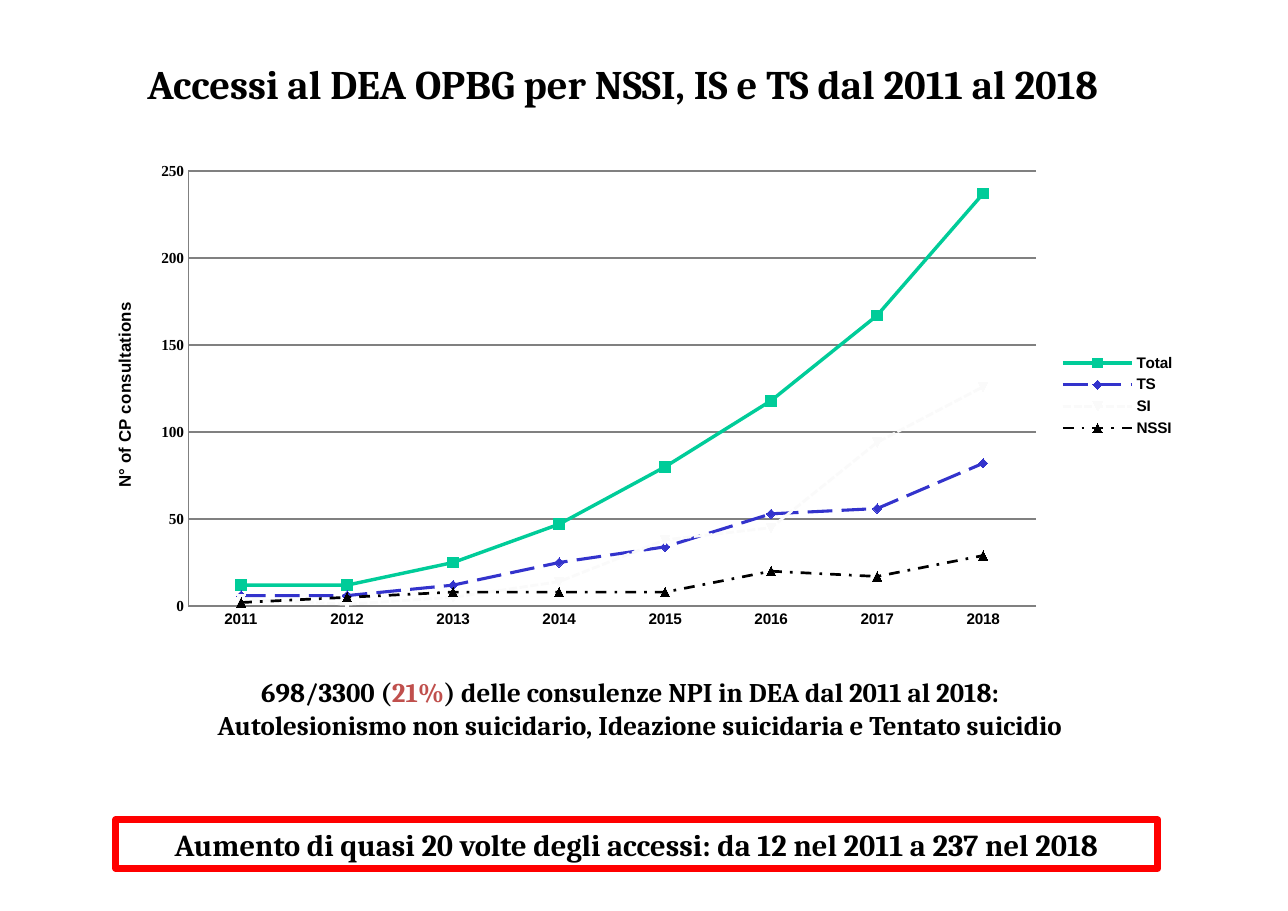
from pptx import Presentation
from pptx.chart.data import CategoryChartData
from pptx.dml.color import RGBColor
from pptx.enum.chart import XL_CHART_TYPE as CT, XL_LEGEND_POSITION as LP
from pptx.enum.chart import XL_TICK_MARK as TM
from pptx.enum.dml import MSO_LINE_DASH_STYLE as DASH
from pptx.enum.shapes import MSO_SHAPE
from pptx.enum.text import PP_ALIGN
from pptx.oxml import parse_xml
from pptx.util import Cm, Pt


def rgb(hex_color):
    return RGBColor.from_string(hex_color)


def write_line(p, size, *parts):
    """Fill a centred bold paragraph with (text, colour) parts."""
    p.alignment = PP_ALIGN.CENTER
    p.font.name, p.font.size, p.font.bold = "Cambria", Pt(size), True
    for text, color in parts:
        r = p.add_run()
        r.text = text
        r.font.color.rgb = rgb(color)


BLACK, GRAY, RED = "000000", "808080", "C0504D"

prs = Presentation()
prs.slide_width, prs.slide_height = Cm(29.7), Cm(21)
s = prs.slides.add_slide(prs.slide_layouts[6])

# Chart: name, values, colour, dash, line width, marker size
series_rows = [
    ("Total", (12, 12, 25, 47, 80, 118, 167, 237), "00CC99", DASH.SOLID, 2.25, 7),
    ("TS", (6, 6, 12, 25, 34, 53, 56, 82), "3333CC", DASH.LONG_DASH, 2, 6),
    ("SI", (4, 1, 5, 14, 38, 45, 94, 126), "FAFAFA", DASH.SQUARE_DOT, 1.75, 6),
    ("NSSI", (2, 5, 8, 8, 8, 20, 17, 29), BLACK, DASH.DASH_DOT, 1.75, 6),
]
data = CategoryChartData()
data.categories = [str(year) for year in range(2011, 2019)]
for name, values, *_ in series_rows:
    data.add_series(name, values)
chart = s.shapes.add_chart(CT.LINE_MARKERS, Cm(2.06), Cm(3.53), Cm(25.3), Cm(11.18), data).chart
chart.has_title = False
chart.font.name, chart.font.size, chart.font.bold = "Times New Roman", Pt(10), True
chart.font.color.rgb = rgb(BLACK)

for series, (_, _, color, dash, width, marker_size) in zip(chart.plots[0].series, series_rows):
    series.smooth = False
    line = series.format.line
    line.color.rgb, line.width, line.dash_style = rgb(color), Pt(width), dash
    series.marker.size = marker_size
    series.marker.format.fill.solid()
    series.marker.format.fill.fore_color.rgb = rgb(color)
    series.marker.format.line.color.rgb = rgb(color)

years, counts = chart.category_axis, chart.value_axis
for axis in (years, counts):
    axis.major_tick_mark = axis.minor_tick_mark = TM.NONE
    axis.format.line.color.rgb = rgb(GRAY)
counts.minimum_scale, counts.maximum_scale, counts.major_unit = 0, 250, 50
counts.major_gridlines.format.line.color.rgb = rgb(GRAY)
counts.axis_title.text_frame.text = "N° of CP consultations"
title_font = counts.axis_title.text_frame.paragraphs[0].font
title_font.size = Pt(11)

chart.has_legend = True
chart.legend.position, chart.legend.include_in_layout = LP.RIGHT, False
for font in (years.tick_labels.font, title_font, chart.legend.font):
    font.name, font.bold = "Arial", True
    font.color.rgb = rgb(BLACK)
years.tick_labels.font.size = chart.legend.font.size = Pt(10)

plot_area = chart.plots[0]._element.getparent()
for old in plot_area.findall("{*}layout"):
    plot_area.remove(old)
plot_area.insert(0, parse_xml(
    '<c:layout xmlns:c="http://schemas.openxmlformats.org/drawingml/2006/chart">'
    '<c:manualLayout><c:layoutTarget val="inner"/><c:xMode val="edge"/><c:yMode val="edge"/>'
    '<c:x val="0.09"/><c:y val="0.037"/><c:w val="0.773"/><c:h val="0.897"/>'
    '</c:manualLayout></c:layout>'))

# Texts
title = s.shapes.add_textbox(Cm(2.06), Cm(1.24), Cm(24.61), Cm(1.4))
summary = s.shapes.add_textbox(Cm(2.97), Cm(15.44), Cm(23.14), Cm(1.8))
increase = s.shapes.add_shape(MSO_SHAPE.RECTANGLE, Cm(2.67), Cm(18.9), Cm(24.03), Cm(1.12))
increase.shadow.inherit = False
increase.fill.background()
increase.line.color.rgb, increase.line.width = rgb("FF0000"), Pt(4.5)
for sp in (title, summary, increase):
    sp.text_frame.word_wrap = True

write_line(title.text_frame.paragraphs[0], 26.5,
           ("Accessi al DEA OPBG per NSSI, IS e TS dal 2011 al 2018", BLACK))
tf = summary.text_frame
write_line(tf.paragraphs[0], 17.6, ("698/3300 (", BLACK), ("21%", RED),
           (") delle consulenze NPI in DEA dal 2011 al 2018:", BLACK))
p = tf.add_paragraph()
p.space_before = Pt(0.5)
p._p.get_or_add_pPr().set("marL", str(Cm(0.45)))
write_line(p, 17.6,
           ("Autolesionismo non suicidario, Ideazione suicidaria e Tentato suicidio", BLACK))
write_line(increase.text_frame.paragraphs[0], 19.9,
           ("Aumento di quasi 20 volte degli accessi: da 12 nel 2011 a 237 nel 2018", BLACK))

prs.save("out.pptx")
